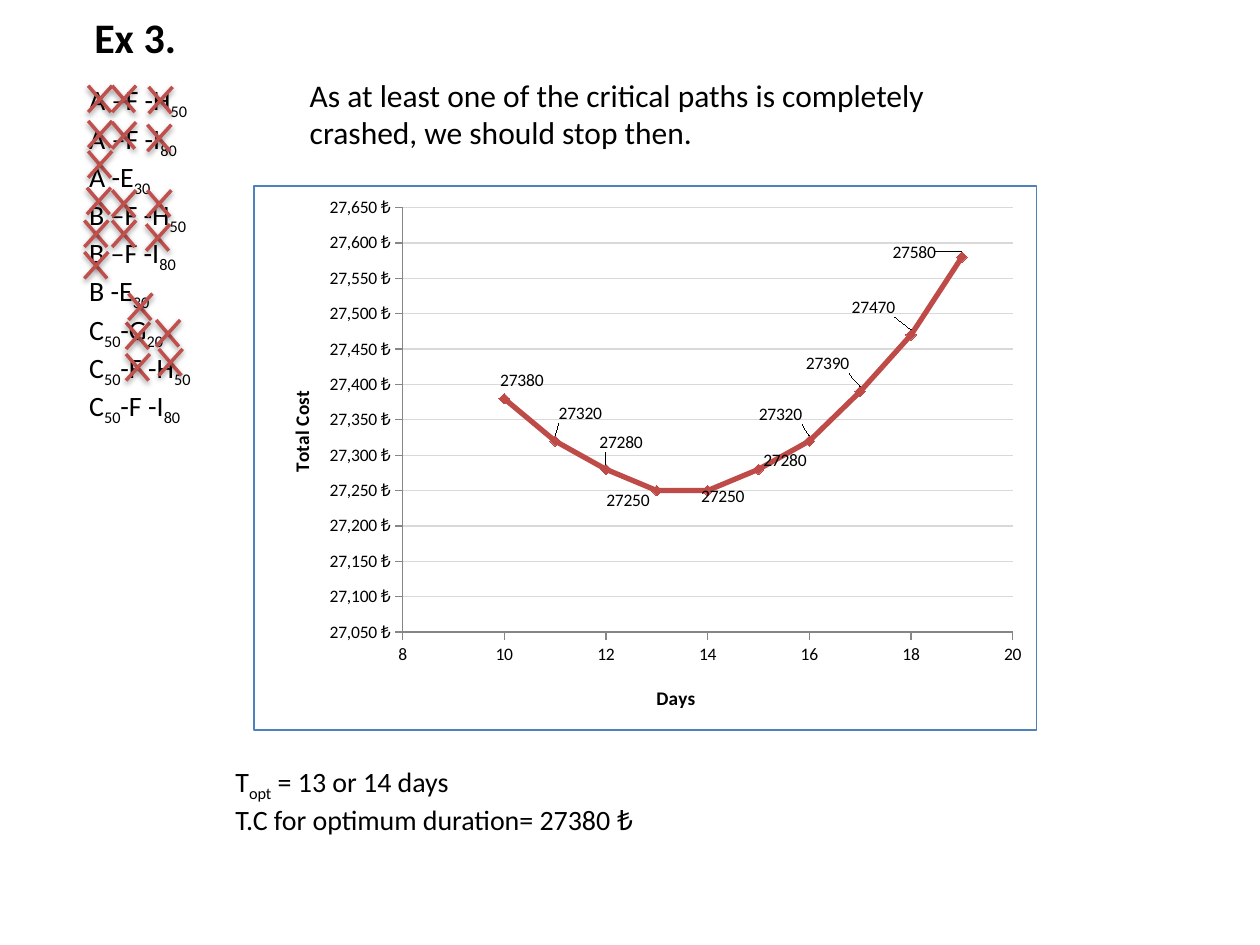
from lxml import etree
from pptx import Presentation
from pptx.chart.data import XyChartData
from pptx.dml.color import RGBColor
from pptx.enum.chart import XL_CHART_TYPE, XL_LABEL_POSITION, XL_MARKER_STYLE, XL_TICK_MARK
from pptx.enum.shapes import MSO_CONNECTOR
from pptx.enum.text import MSO_AUTO_SIZE
from pptx.oxml import parse_xml
from pptx.oxml.ns import nsdecls, qn
from pptx.util import Inches, Pt

SCATTER = XL_CHART_TYPE.XY_SCATTER_LINES
ABOVE = XL_LABEL_POSITION.ABOVE
DIAMOND = XL_MARKER_STYLE.DIAMOND
OUTSIDE = XL_TICK_MARK.OUTSIDE
NO_TICK = XL_TICK_MARK.NONE
STRAIGHT = MSO_CONNECTOR.STRAIGHT
GROW = MSO_AUTO_SIZE.SHAPE_TO_FIT_TEXT

FONT = "Calibri"
BLACK, RED, CURVE = "000000", "C0504D", "BE4B48"
GRAY, GRID, BORDER = "868686", "D9D9D9", "4F81BD"
WIDE, HIGH = 6.22, 4.33

PATHS = [
    "A –F -H_50", "A –F -I_80", "A -E_30", "B –F -H_50", "B –F -I_80",
    "B -E_30\vC_50_-G_20", "C_50_-F -H_50", "C_50_-F -I_80",
]
GROUPED = [
    (0.7, 0.68), (0.89, 0.68), (0.7, 0.96), (0.89, 0.97), (0.7, 1.2),
    (0.69, 1.49), (0.89, 1.51), (0.67, 1.75), (0.89, 1.75), (0.67, 2),
    (1, 2.56), (1, 2.81),
]
LOOSE = [
    (1.18, 0.69), (1.17, 0.99), (1.17, 1.51), (1.16, 1.78),
    (1.02, 2.33), (1.24, 2.54), (1.26, 2.77),
]
COSTS = [
    (19, 27580, -0.38, 0.12), (18, 27470, -0.3, -0.06),
    (17, 27390, -0.26, -0.06), (16, 27320, -0.23, -0.05),
    (15, 27280, 0.21, 0.09), (14, 27250, 0.12, 0.21),
    (13, 27250, -0.23, 0.24), (12, 27280, 0.12, -0.05),
    (11, 27320, 0.2, -0.06), (10, 27380, 0.14, 0.02),
]


def rgb(code):
    """Turn a hex string into a colour."""
    return RGBColor.from_string(code)


def style(font, size, color=BLACK, bold=False):
    """Format one font."""
    font.name, font.size, font.bold = FONT, Pt(size), bold
    font.color.rgb = rgb(color)


def add_text(shapes, lines, box, size=16, bold=False):
    """Add a text box in which underscores switch subscript on and off."""
    shape = shapes.add_textbox(*map(Inches, box))
    frame = shape.text_frame
    frame.word_wrap, frame.auto_size = True, GROW
    for i, line in enumerate(lines):
        para = frame.paragraphs[0] if i == 0 else frame.add_paragraph()
        for j, row in enumerate(line.split("\v")):
            if j:
                para.add_line_break()
            for k, part in enumerate(row.split("_")):
                run = para.add_run()
                run.text = part
                style(run.font, size, bold=bold)
                if k % 2:
                    run.font._element.set("baseline", "-25000")


def add_stroke(shapes, ends):
    """Add one red line with a soft shadow."""
    line = shapes.add_connector(STRAIGHT, *map(Inches, ends))
    line.line.color.rgb, line.line.width = rgb(RED), Pt(2)
    line.element.spPr.append(parse_xml(
        f'<a:effectLst {nsdecls("a")}><a:outerShdw blurRad="40000" dist="20000" '
        'dir="5400000" rotWithShape="0"><a:srgbClr val="000000">'
        '<a:alpha val="38000"/></a:srgbClr></a:outerShdw></a:effectLst>'))


def add_cross(shapes, x, y):
    """Cross out one activity."""
    add_stroke(shapes, (x, y, x + 0.18, y + 0.21))
    add_stroke(shapes, (x + 0.19, y, x, y + 0.21))


def place(node, index, **values):
    """Give a chart part a manual layout."""
    for old in node.findall(qn("c:layout")):
        node.remove(old)
    layout = etree.Element(qn("c:layout"))
    manual = etree.SubElement(layout, qn("c:manualLayout"))
    for tag, value in values.items():
        etree.SubElement(manual, qn("c:" + tag)).set("val", str(value))
    node.insert(index, layout)


def set_axis(axis, title, low, high, step):
    """Format one value axis."""
    axis.minimum_scale, axis.maximum_scale, axis.major_unit = low, high, step
    axis.major_tick_mark, axis.minor_tick_mark = OUTSIDE, NO_TICK
    axis.has_major_gridlines = False
    axis.format.line.color.rgb = rgb(GRAY)
    style(axis.tick_labels.font, 10)
    frame = axis.axis_title.text_frame
    frame.text = title
    style(frame.paragraphs[0].runs[0].font, 11, bold=True)


def set_curve(series):
    """Format the cost curve and its point labels."""
    series.smooth = False
    series.format.line.color.rgb, series.format.line.width = rgb(CURVE), Pt(3)
    mark = series.marker
    mark.style, mark.size = DIAMOND, 6
    mark.format.fill.solid()
    mark.format.fill.fore_color.rgb = rgb(CURVE)
    mark.format.line.color.rgb = rgb(CURVE)
    for i in range(len(COSTS)):
        series.points[i].data_label.position = ABOVE


def add_cost_chart(shapes):
    """Add the chart of total cost over days."""
    data = XyChartData()
    curve = data.add_series("Series 1")
    for day, cost, *_ in COSTS:
        curve.add_data_point(day, cost)
    box = map(Inches, (2.01, 1.47, WIDE, HIGH))
    chart = shapes.add_chart(SCATTER, *box, data).chart
    chart.has_title = chart.has_legend = False
    style(chart.font, 10)
    chart.plots[0].vary_by_categories = False
    set_curve(chart.plots[0].series[0])
    set_axis(chart.category_axis, "Days", 8, 20, 2)
    cost = chart.value_axis
    set_axis(cost, "Total Cost", 27050, 27650, 50)
    cost.has_major_gridlines = True
    grid = cost.major_gridlines.format.line
    grid.color.rgb, grid.width = rgb(GRID), Pt(0.75)
    cost.tick_labels.number_format = '#,##0\\ "₺"'
    cost.tick_labels.number_format_is_linked = False

    root = chart._chartSpace
    place(root.xpath("//c:plotArea")[0], 0, layoutTarget="inner",
          xMode="edge", yMode="edge", x=0.19, y=0.04, w=0.78, h=0.78)
    for title, (x, y) in zip(root.xpath("//c:valAx/c:title"), [(0.51, 0.91), (0.04, 0.37)]):
        place(title, 1, xMode="edge", yMode="edge", x=x, y=y)
    for label, (_, _, dx, dy) in zip(root.xpath("//c:dLbl"), COSTS):
        place(label, 1, x=dx / WIDE, y=dy / HIGH)
    root.find(qn("c:chart")).addnext(parse_xml(
        f'<c:spPr {nsdecls("c", "a")}><a:noFill/><a:ln w="9525"><a:solidFill>'
        f'<a:srgbClr val="{BORDER}"/></a:solidFill></a:ln></c:spPr>'))


def main():
    """Build the slide and save it."""
    deck = Presentation()
    deck.slide_width, deck.slide_height = Inches(10), Inches(7.5)
    shapes = deck.slides.add_slide(deck.slide_layouts[6]).shapes
    add_text(shapes, ["Ex 3."], (0.65, 0.04, 2.96, 0.5), size=24, bold=True)
    add_text(shapes, ["T_opt_ = 13 or 14 days", "T.C for optimum duration= 27380 ₺"],
             (1.77, 6.02, 5.01, 0.94))
    add_text(shapes, ["As at least one of the critical paths is completely "
                      "crashed, we should stop then."], (2.36, 0.55, 5.25, 0.71), size=18)
    add_cost_chart(shapes)
    group = shapes.add_group_shape().shapes
    add_text(group, PATHS, (0.61, 0.61, 1.2, 2.7))
    for x, y in GROUPED:
        add_cross(group, x, y)
    for x, y in LOOSE:
        add_cross(shapes, x, y)
    deck.save("out.pptx")


if __name__ == "__main__":
    main()
